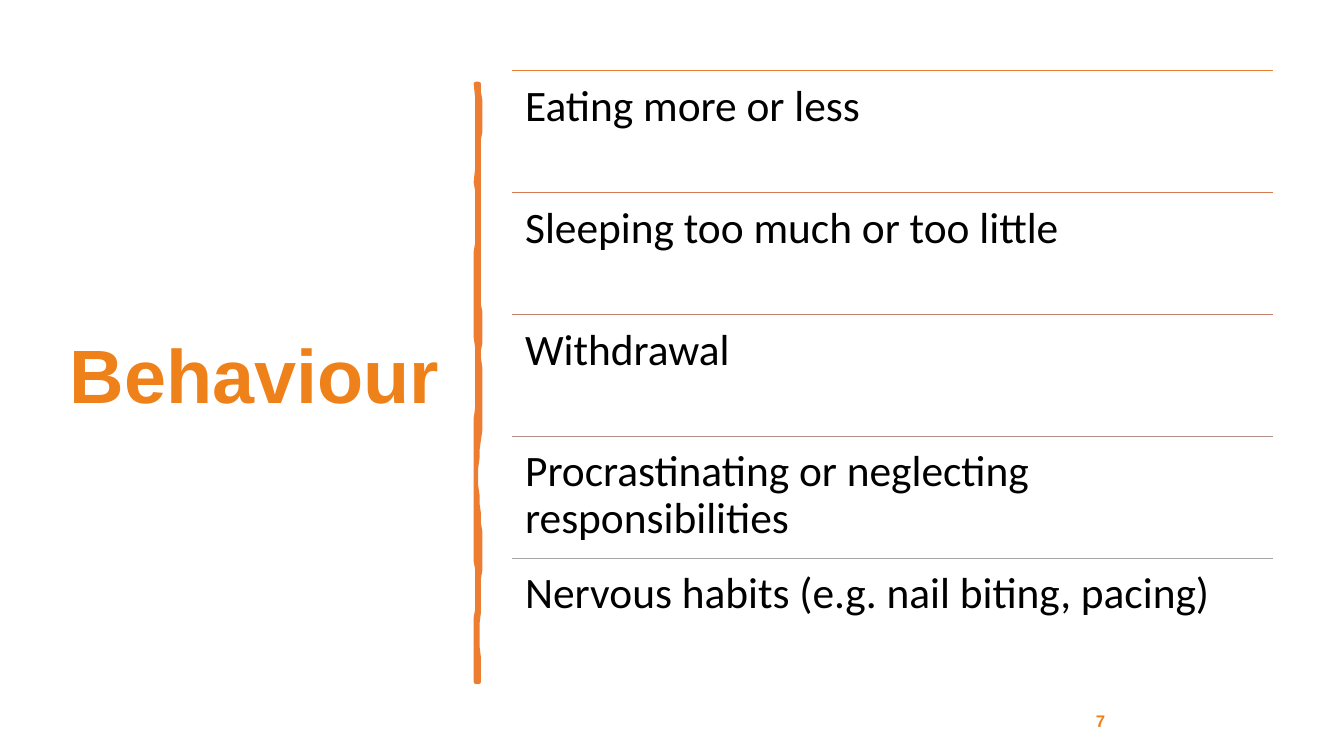
"""Build the slide on behavioural signs of stress."""
from math import pi, sin

from pptx import Presentation
from pptx.dml.color import RGBColor
from pptx.enum.shapes import MSO_CONNECTOR as CONNECTOR
from pptx.enum.text import MSO_ANCHOR as ANCHOR, PP_ALIGN as ALIGN
from pptx.oxml.ns import qn
from pptx.util import Pt

TITLE = "Behaviour"
PAGE = "7"
SIGNS = [
    ("Eating more or less", "ED7D31"),
    ("Sleeping too much or too little", "D87A51"),
    ("Withdrawal", "C48170"),
    ("Procrastinating or neglecting responsibilities", "B4908B"),
    ("Nervous habits (e.g. nail biting, pacing)", "A5A5A5"),
]
ORANGE, STROKE_ORANGE, BLACK = "EF811B", "ED7D31", "000000"

SIGN_LEFT, SIGN_TOP, SIGN_WIDTH, SIGN_HEIGHT = 365.8, 50.4, 543.6, 87.12
STROKE_LEFT, STROKE_RIGHT, STROKE_TOP = 340.5, 342, 60.5
RIGHT_BENDS = [(105, 1.1), (163, 0.3), (212, -0.4), (256, 0.8),
               (314, 1.4), (367, -2), (420, 1.1), (487, -0.6)]
LEFT_BENDS = [(441, -0.7), (401, 0.5), (343, -0.5), (299, -0.6),
              (241, 0.3), (180, -0.4), (130, 0.6), (60.5, 0.5)]
STEPS = 8


def colour(value):
    return RGBColor.from_string(value)


def add_text(slide, text, box, font, size, ink, bold=False, inset=0,
             anchor=ANCHOR.MIDDLE, align=ALIGN.LEFT, spacing=1):
    frame = slide.shapes.add_textbox(*map(Pt, box)).text_frame
    frame.word_wrap = True
    frame.vertical_anchor = anchor
    frame.margin_left = frame.margin_right = Pt(inset)
    frame.margin_top = frame.margin_bottom = Pt(inset)
    frame.text = text
    paragraph = frame.paragraphs[0]
    paragraph.alignment = align
    paragraph.line_spacing = spacing
    style = paragraph.runs[0].font
    style.name, style.size, style.bold = font, Pt(size), bold
    style.color.rgb = colour(ink)


def add_rule(slide, top, ink):
    rule = slide.shapes.add_connector(
        CONNECTOR.STRAIGHT, Pt(SIGN_LEFT), Pt(top),
        Pt(SIGN_LEFT + SIGN_WIDTH), Pt(top))
    rule.line.color.rgb = colour(ink)
    rule.line.width = Pt(1)
    properties = rule._element.spPr
    properties.append(properties.makeelement(qn("a:effectLst"), {}))


def wavy_edge(x, start, bends):
    points = []
    for end, bulge in bends:
        for step in range(1, STEPS + 1):
            t = step / STEPS
            points.append((x + bulge * sin(pi * t), start + (end - start) * t))
        start = end
    return points


def add_brush_stroke(slide):
    bottom = RIGHT_BENDS[-1][0]
    builder = slide.shapes.build_freeform(STROKE_RIGHT, STROKE_TOP, scale=Pt(1))
    builder.add_line_segments(
        wavy_edge(STROKE_RIGHT, STROKE_TOP, RIGHT_BENDS)
        + [(STROKE_LEFT, bottom)]
        + wavy_edge(STROKE_LEFT, bottom, LEFT_BENDS))
    stroke = builder.convert_to_shape()
    stroke.shadow.inherit = False
    stroke.fill.solid()
    stroke.fill.fore_color.rgb = colour(STROKE_ORANGE)
    stroke.line.color.rgb = colour(STROKE_ORANGE)
    stroke.line.width = Pt(3.25)


def main():
    deck = Presentation()
    deck.slide_width, deck.slide_height = Pt(960), Pt(540)
    slide = deck.slides.add_slide(deck.slide_layouts[6])
    add_text(slide, TITLE, (49.7, 50.4, 269.3, 440), "Arial", 54, ORANGE,
             bold=True, spacing=0.9)
    add_brush_stroke(slide)
    add_text(slide, PAGE, (678.2, 500.4, 216, 28.8), "Arial", 12, ORANGE,
             bold=True, align=ALIGN.CENTER)
    for row, (sign, ink) in enumerate(SIGNS):
        top = SIGN_TOP + row * SIGN_HEIGHT
        add_rule(slide, top, ink)
        add_text(slide, sign, (SIGN_LEFT, top, SIGN_WIDTH, SIGN_HEIGHT),
                 "Calibri", 31, BLACK, inset=9.3, anchor=ANCHOR.TOP,
                 spacing=0.9)
    deck.save("out.pptx")


if __name__ == "__main__":
    main()
